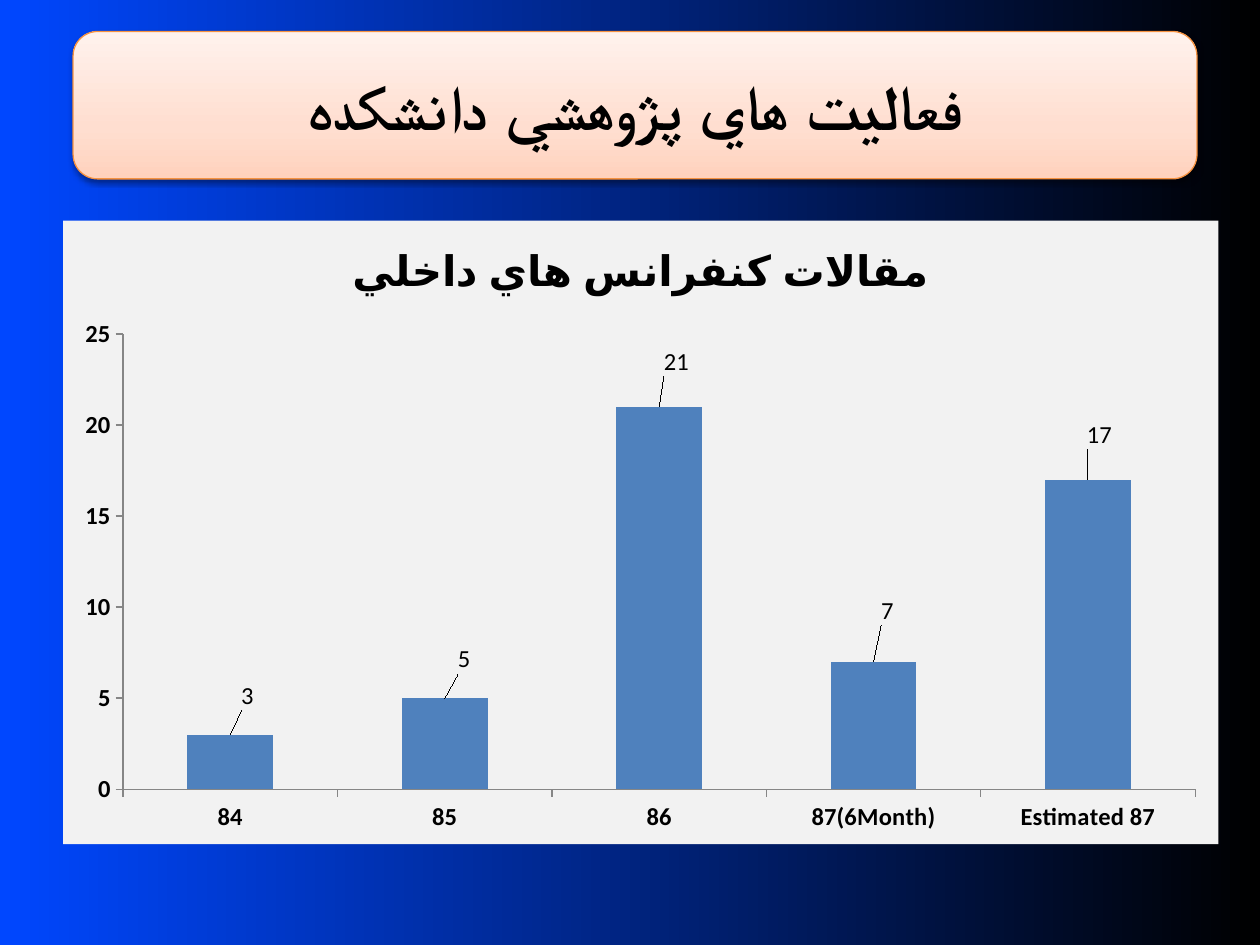
from dataclasses import dataclass

from pptx import Presentation
from pptx import oxml, util as u
from pptx.chart.data import CategoryChartData
from pptx.dml.color import RGBColor
from pptx.enum import chart as charts, shapes, text
from pptx.oxml import ns


@dataclass(frozen=True)
class Theme:
    font: str = "Calibri"
    ink: str = "000000"
    background: tuple = ((0, "000000"), (100, "0047FF"))
    banner: tuple = ((0, "FFD2BD"), (35, "FFDED0"), (100, "FFF2ED"))
    banner_line: str = "F69240"
    panel: str = "F2F2F2"
    bar: str = "4F81BD"
    axis: str = "868686"
    heading_size: int = 36
    chart_title_size: int = 24
    label_size: int = 14


theme = Theme()


def apply_gradient(fill, parent, stops, angle):
    fill.gradient()
    fill.gradient_angle = angle
    stop_list = parent.xpath(".//a:gradFill/a:gsLst")[0]
    for stop in list(stop_list):
        stop_list.remove(stop)
    for position, color in stops:
        stop_list.append(oxml.parse_xml(
            f'<a:gs {ns.nsdecls("a")} pos="{position * 1000}">'
            f'<a:srgbClr val="{color}"/></a:gs>'))


def manual_layout(**values):
    entries = "".join(f'<c:{name} val="{value}"/>' for name, value in values.items())
    return oxml.parse_xml(
        f'<c:layout {ns.nsdecls("c")}><c:manualLayout>{entries}</c:manualLayout></c:layout>')


presentation = Presentation()
presentation.slide_width = u.Inches(10)
presentation.slide_height = u.Inches(7.5)
slide = presentation.slides.add_slide(presentation.slide_layouts[6])
apply_gradient(slide.background.fill, slide.element, theme.background, 180)

banner = slide.shapes.add_shape(
    shapes.MSO_SHAPE.ROUNDED_RECTANGLE,
    u.Inches(0.58), u.Inches(0.25), u.Inches(8.92), u.Inches(1.17))
apply_gradient(banner.fill, banner.element, theme.banner, 90)
banner.line.color.rgb = RGBColor.from_string(theme.banner_line)
banner.line.width = u.Pt(0.75)
banner.shadow.inherit = False
banner.element.xpath("./p:spPr/a:effectLst")[0].append(oxml.parse_xml(
    f'<a:outerShdw {ns.nsdecls("a")} blurRad="{u.Pt(3.1)}" dist="{u.Pt(1.6)}" '
    f'dir="5400000" rotWithShape="0"><a:srgbClr val="{theme.ink}">'
    '<a:alpha val="38000"/></a:srgbClr></a:outerShdw>'))
banner.text_frame.word_wrap = True
banner.text_frame.vertical_anchor = text.MSO_ANCHOR.MIDDLE
paragraph = banner.text_frame.paragraphs[0]
paragraph.text = "فعاليت هاي پژوهشي دانشكده"
paragraph.alignment = text.PP_ALIGN.CENTER
paragraph.font.name = theme.font
paragraph.font.size = u.Pt(theme.heading_size)
paragraph.font.bold = True
paragraph.font.color.rgb = RGBColor.from_string(theme.ink)

chart_title = "مقالات كنفرانس هاي داخلي"
chart_data = CategoryChartData()
chart_data.categories = ["84", "85", "86", "87(6Month)", "Estimated 87"]
chart_data.add_series(chart_title, [3, 5, 21, 7, 17])
chart = slide.shapes.add_chart(
    charts.XL_CHART_TYPE.COLUMN_CLUSTERED,
    u.Inches(0.5), u.Inches(1.75), u.Inches(9.17), u.Inches(4.95), chart_data).chart
chart.has_legend = False
chart.font.name = theme.font
chart.font.size = u.Pt(10)
chart.font.color.rgb = RGBColor.from_string(theme.ink)
chart.element.xpath("./c:chart")[0].addnext(oxml.parse_xml(
    f'<c:spPr {ns.nsdecls("c", "a")}><a:solidFill><a:srgbClr val="{theme.panel}"/>'
    '</a:solidFill><a:ln><a:noFill/></a:ln></c:spPr>'))

chart.has_title = True
paragraph = chart.chart_title.text_frame.paragraphs[0]
paragraph.text = chart_title
paragraph.font.name = theme.font
paragraph.font.size = u.Pt(theme.chart_title_size)
paragraph.font.bold = True
paragraph.font.color.rgb = RGBColor.from_string(theme.ink)

plot_area = chart.element.xpath("./c:chart/c:plotArea")[0]
for layout in plot_area.xpath("./c:layout"):
    plot_area.remove(layout)
plot_area.insert(0, manual_layout(
    layoutTarget="inner", xMode="edge", yMode="edge", x=0.052, y=0.182, w=0.928, h=0.73))

for axis in (chart.category_axis, chart.value_axis):
    axis.has_major_gridlines = False
    axis.major_tick_mark = charts.XL_TICK_MARK.OUTSIDE
    axis.format.line.color.rgb = RGBColor.from_string(theme.axis)
    axis.tick_labels.font.size = u.Pt(theme.label_size)
    axis.tick_labels.font.bold = True
chart.value_axis.minimum_scale = 0
chart.value_axis.maximum_scale = 25
chart.value_axis.major_unit = 5

plot = chart.plots[0]
plot.gap_width = 150
plot.vary_by_categories = False
series = plot.series[0]
series.format.fill.solid()
series.format.fill.fore_color.rgb = RGBColor.from_string(theme.bar)

label_offsets = [(0.015, -0.03), (0.017, -0.03), (0.015, -0.04), (0.012, -0.05), (0.01, -0.04)]
for index, (across, down) in enumerate(label_offsets):
    label = series.points[index].data_label
    label.font.size = u.Pt(theme.label_size)
    label.position = charts.XL_LABEL_POSITION.OUTSIDE_END
    label_index = chart.element.xpath(f'.//c:dLbl/c:idx[@val="{index}"]')[0]
    label_index.addnext(manual_layout(x=across, y=down))

presentation.save("out.pptx")
